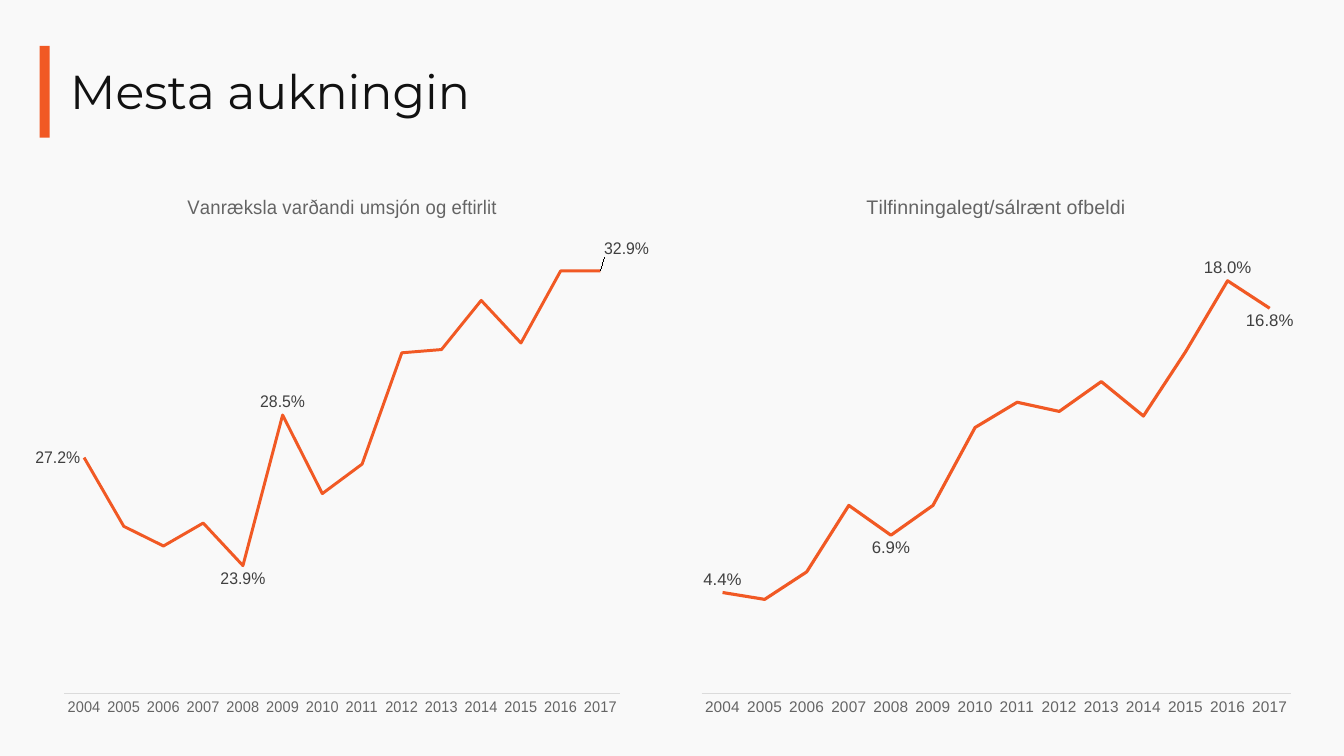
from lxml import etree
from pptx import Presentation
from pptx.chart.data import CategoryChartData as ChartData
from pptx.dml.color import RGBColor as Rgb
from pptx.enum.chart import XL_CHART_TYPE as Kind, XL_LABEL_POSITION as Pos, XL_TICK_MARK as Tick
from pptx.enum.shapes import MSO_SHAPE as Shape
from pptx.enum.text import MSO_ANCHOR as Anchor
from pptx.oxml import parse_xml
from pptx.util import Cm, Pt

TITLE = "Mesta aukningin"
YEARS = [str(year) for year in range(2004, 2018)]
# labels: point index -> label position; shift: point index -> upward move
CHARTS = [
    {
        "title": "Vanræksla varðandi umsjón og eftirlit",
        "vals": [0.272, 0.251, 0.245, 0.252, 0.239, 0.285, 0.261,
                 0.270, 0.304, 0.305, 0.320, 0.307, 0.329, 0.329],
        "range": (0.2, 0.34),
        "labels": {0: Pos.LEFT, 4: Pos.BELOW, 5: Pos.ABOVE, 13: Pos.RIGHT},
        "shift": {13: -0.04},
    },
    {
        "title": "Tilfinningalegt/sálrænt ofbeldi",
        "vals": [0.044, 0.041, 0.053, 0.082, 0.069, 0.082, 0.116,
                 0.127, 0.123, 0.136, 0.121, 0.149, 0.180, 0.168],
        "range": (0, 0.2),
        "labels": {0: Pos.ABOVE, 4: Pos.BELOW, 12: Pos.ABOVE, 13: Pos.BELOW},
        "shift": {},
    },
]
COLORS = {"back": "F9F9F9", "accent": "F15924", "ink": "111111",
          "grey": "646464", "label": "404040", "axis": "DBDBDB"}
LEFT, TOP, WIDE, HIGH, STEP = 0.89, 4.39, 15.47, 13.92, 16.48
PLOT = {"x": 0.02, "y": 0.11, "w": 0.96, "h": 0.83}
C_NS = "http://schemas.openxmlformats.org/drawingml/2006/chart"


def color(name):
    return Rgb.from_string(COLORS[name])


def style(font, size, name, face="Arial"):
    font.size, font.name, font.bold = Pt(size), face, False
    font.color.rgb = color(name)


def layout(parts, inner=False):
    """Build a manual chart layout from fractions of the chart size."""
    node = etree.Element(f"{{{C_NS}}}layout", nsmap={"c": C_NS})
    manual = etree.SubElement(node, f"{{{C_NS}}}manualLayout")
    rules = {"layoutTarget": "inner", "xMode": "edge", "yMode": "edge"} if inner else {}
    for tag, val in {**rules, **parts}.items():
        etree.SubElement(manual, f"{{{C_NS}}}{tag}", val=str(val))
    return parse_xml(etree.tostring(node))


def add_labels(line, item):
    labels = line.data_labels
    labels.show_value = False
    for idx, pos in item["labels"].items():
        label = line.points[idx].data_label
        style(label.font, 12, "label")
        label.position = pos
    for idx, move in item["shift"].items():
        node = labels._element.xpath(f'c:dLbl[c:idx/@val="{idx}"]')[0]
        node.insert(1, layout({"x": 0, "y": move}))


def add_line(slide, item, left):
    data = ChartData(number_format="0.0%")
    data.categories = YEARS
    data.add_series(item["title"], item["vals"])
    chart = slide.shapes.add_chart(Kind.LINE, Cm(left), Cm(TOP), Cm(WIDE), Cm(HIGH), data).chart
    style(chart.font, 10, "ink")
    chart.has_legend = False
    chart.has_title = True
    run = chart.chart_title.text_frame.paragraphs[0].add_run()
    run.text = item["title"]
    style(run.font, 14, "grey")

    years = chart.category_axis
    years.major_tick_mark = years.minor_tick_mark = Tick.NONE
    years.has_major_gridlines = False
    style(years.tick_labels.font, 11, "grey")
    years.format.line.color.rgb = color("axis")
    years.format.line.width = Pt(0.75)
    share = chart.value_axis
    share.minimum_scale, share.maximum_scale = item["range"]
    share.has_major_gridlines = False
    share.visible = False

    line = chart.plots[0].series[0]
    line.smooth = False
    line.format.line.color.rgb = color("accent")
    line.format.line.width = Pt(2.25)
    add_labels(line, item)
    area = chart._chartSpace.xpath("c:chart/c:plotArea")[0]
    for old in area.xpath("c:layout"):
        area.remove(old)
    area.insert(0, layout(PLOT, inner=True))


def add_head(slide):
    bar = slide.shapes.add_shape(Shape.RECTANGLE, Cm(1), Cm(1.16), Cm(0.25), Cm(2.31))
    bar.shadow.inherit = False
    bar.fill.solid()
    bar.fill.fore_color.rgb = color("accent")
    bar.line.fill.background()
    frame = slide.shapes.add_textbox(Cm(1.52), Cm(1.02), Cm(31.34), Cm(2.69)).text_frame
    frame.word_wrap = True
    frame.vertical_anchor = Anchor.MIDDLE
    para = frame.paragraphs[0]
    para.line_spacing = 0.9
    run = para.add_run()
    run.text = TITLE
    style(run.font, 34, "ink", "Montserrat")


def main():
    deck = Presentation()
    deck.slide_width, deck.slide_height = Cm(33.87), Cm(19.05)
    slide = deck.slides.add_slide(deck.slide_layouts[6])
    slide.background.fill.solid()
    slide.background.fill.fore_color.rgb = color("back")
    add_head(slide)
    for idx, item in enumerate(CHARTS):
        add_line(slide, item, LEFT + idx * STEP)
    deck.save("out.pptx")


if __name__ == "__main__":
    main()
